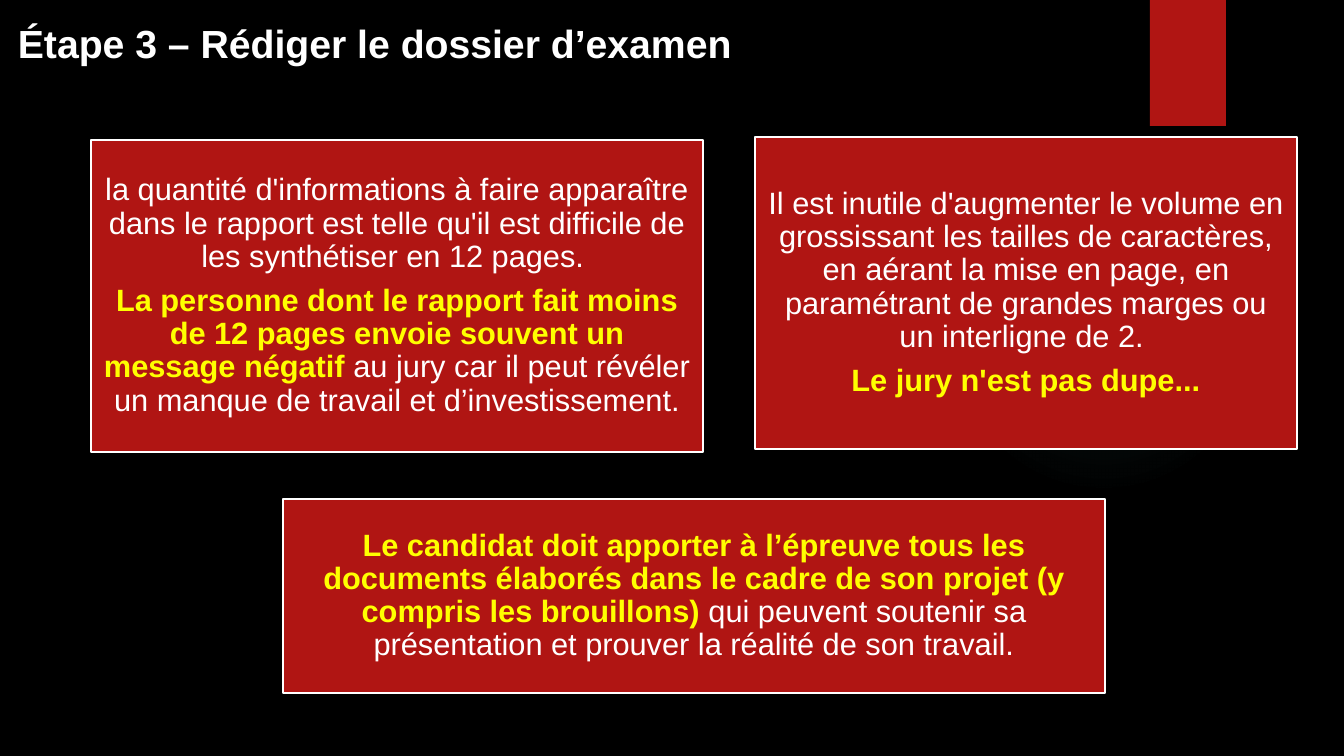
from lxml import etree
from pptx import Presentation
from pptx.dml.color import RGBColor
from pptx.enum.shapes import MSO_SHAPE
from pptx.enum.text import MSO_ANCHOR, PP_ALIGN
from pptx.oxml import parse_xml
from pptx.util import Pt

RECTANGLE, OVAL = MSO_SHAPE.RECTANGLE, MSO_SHAPE.OVAL
MIDDLE, CENTER, JUSTIFY = MSO_ANCHOR.MIDDLE, PP_ALIGN.CENTER, PP_ALIGN.JUSTIFY
EMU_PER_PX = 914400 / 100.8
DRAWING = "http://schemas.openxmlformats.org/drawingml/2006/main"
FONT = "Arial"
COLORS = {"background": "000000", "red": "B01513", "plain": "FFFFFF",
          "strong": "FFFF00", "glow": "50B9C1"}

TITLE = "Étape 3\u00a0– Rédiger le dossier d’examen"
TITLE_AREA = (8, 10, 1285, 57)
RIBBON_AREA = (1150, 0, 76, 126)
GLOW_AREA = (949, 184, 310, 310)
GLOW_STOPS = [(0, 7), (36, 6), (69, 0)]
CARDS = [
    ((91, 140, 612, 312), [
        [("la quantité d'informations à faire apparaître dans le rapport est telle "
          "qu'il est difficile de les synthétiser en 12 pages. ", "plain")],
        [("La personne dont le rapport fait moins de 12 pages envoie souvent un "
          "message négatif ", "strong"),
         ("au jury car il peut révéler un manque de travail et d’investissement.", "plain")],
    ]),
    ((755, 137, 542, 312), [
        [("Il est inutile d'augmenter le volume en grossissant les tailles de caractères, "
          "en aérant la mise en page, en paramétrant de grandes marges ou un interligne "
          "de 2. ", "plain")],
        [("Le jury n'est pas dupe...", "strong")],
    ]),
    ((283, 499, 822, 194), [
        [("Le candidat doit apporter à l’épreuve tous les documents élaborés dans le cadre "
          "de son projet (y compris les brouillons) ", "strong"),
         ("qui peuvent soutenir sa présentation et prouver la réalité de son travail.", "plain")],
    ]),
]


def px(length):
    return round(length * EMU_PER_PX)


def color(name):
    return RGBColor.from_string(COLORS[name])


def add_shape(page, kind, area):
    shape = page.shapes.add_shape(kind, *map(px, area))
    shape.shadow.inherit = False
    shape.line.fill.background()
    return shape


def add_glow(page):
    glow = add_shape(page, OVAL, GLOW_AREA)
    stops = "".join(
        f'<a:gs pos="{place * 1000}"><a:srgbClr val="{COLORS["glow"]}">'
        f'<a:alpha val="{opacity * 1000}"/></a:srgbClr></a:gs>'
        for place, opacity in GLOW_STOPS)
    gradient = parse_xml(
        f'<a:gradFill xmlns:a="{DRAWING}"><a:gsLst>{stops}</a:gsLst><a:path path="circle">'
        '<a:fillToRect l="50000" t="50000" r="50000" b="50000"/></a:path></a:gradFill>')
    glow.element.spPr.find(f"{{{DRAWING}}}prstGeom").addnext(gradient)


def add_ribbon(page):
    ribbon = add_shape(page, RECTANGLE, RIBBON_AREA)
    ribbon.fill.solid()
    ribbon.fill.fore_color.rgb = color("red")
    effects = ribbon.element.spPr.find(f"{{{DRAWING}}}effectLst")
    shadow = etree.SubElement(effects, f"{{{DRAWING}}}outerShdw", blurRad=str(Pt(3)),
                              dist=str(Pt(2)), dir="5400000", rotWithShape="0")
    shade = etree.SubElement(shadow, f"{{{DRAWING}}}srgbClr", val=COLORS["background"])
    etree.SubElement(shade, f"{{{DRAWING}}}alpha", val="45000")


def add_title(page):
    frame = page.shapes.add_textbox(*map(px, TITLE_AREA)).text_frame
    frame.word_wrap = True
    frame.margin_top = px(9)
    para = frame.paragraphs[0]
    para.text = TITLE
    para.alignment = JUSTIFY
    para.space_after = Pt(6)
    para.font.name, para.font.size, para.font.bold = FONT, Pt(28), True
    para.font.color.rgb = color("plain")


def add_card(page, area, paragraphs):
    card = add_shape(page, RECTANGLE, area)
    card.fill.solid()
    card.fill.fore_color.rgb = color("red")
    card.line.color.rgb = color("plain")
    card.line.width = Pt(1.5)
    frame = card.text_frame
    frame.word_wrap = True
    frame.vertical_anchor = MIDDLE
    frame.margin_left = frame.margin_right = px(9)
    frame.margin_top = frame.margin_bottom = px(9)
    for index, spans in enumerate(paragraphs):
        para = frame.add_paragraph() if index else frame.paragraphs[0]
        para.alignment = CENTER
        para.line_spacing = 0.9
        para.space_after = Pt(7.7)
        para.font.name, para.font.size = FONT, Pt(22)
        for text, style in spans:
            span = para.add_run()
            span.text = text
            span.font.bold = style == "strong"
            span.font.color.rgb = color(style)


def main():
    deck = Presentation()
    deck.slide_width, deck.slide_height = px(1344), px(756)
    page = deck.slides.add_slide(deck.slide_layouts[6])
    page.background.fill.solid()
    page.background.fill.fore_color.rgb = color("background")
    add_glow(page)
    add_ribbon(page)
    add_title(page)
    for area, paragraphs in CARDS:
        add_card(page, area, paragraphs)
    deck.save("out.pptx")


if __name__ == "__main__":
    main()
